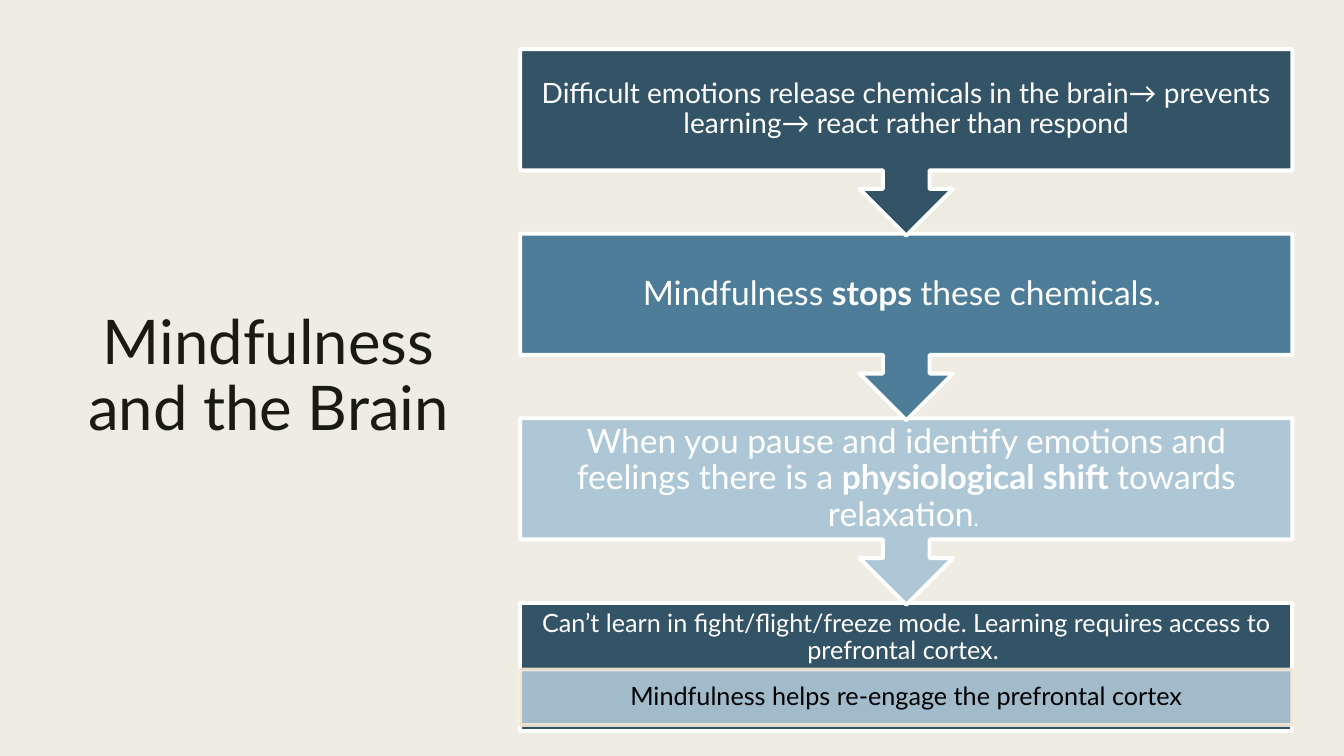
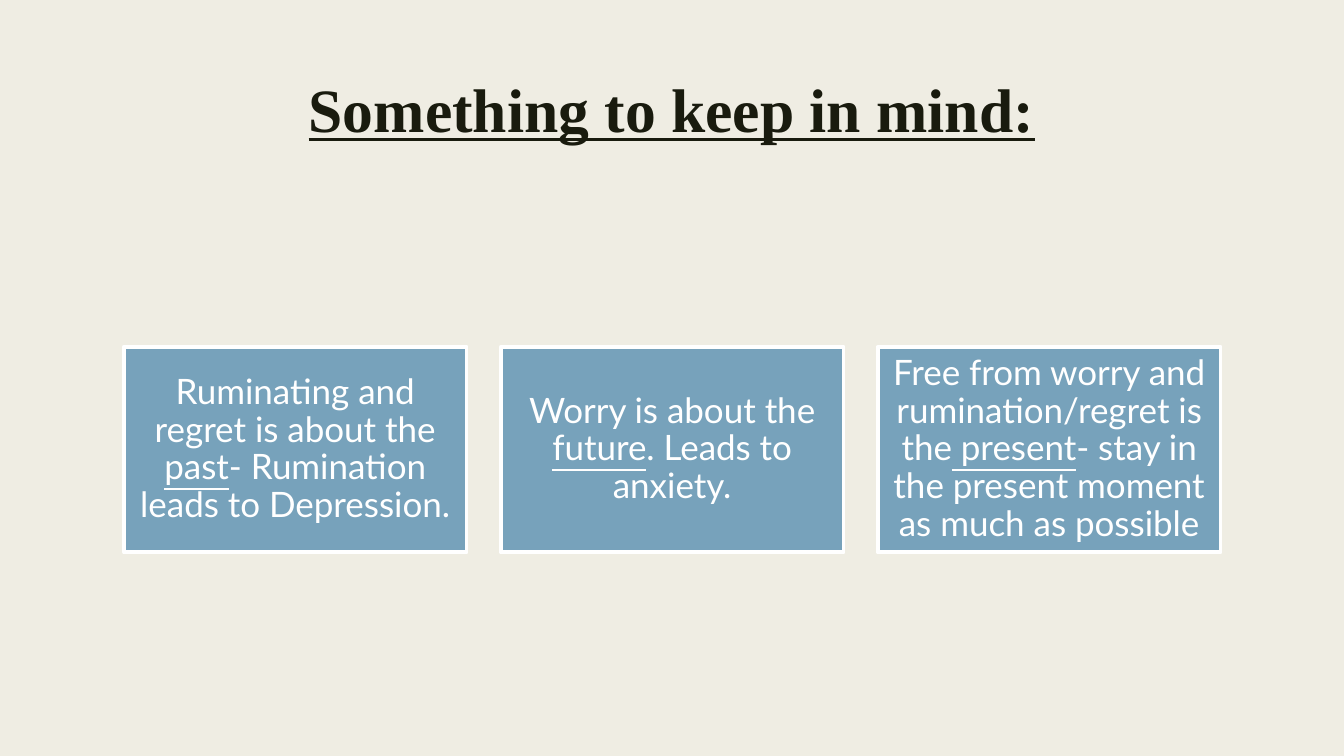
from lxml import etree
from pptx import Presentation
from pptx.dml.color import RGBColor
from pptx.enum.shapes import MSO_SHAPE as Shape
from pptx.enum.text import MSO_ANCHOR as Anchor, PP_ALIGN as Align
from pptx.oxml.ns import qn
from pptx.util import Cm, Pt

PAPER, INK, WHITE, BLACK = "EFEDE3", "191B0E", "FFFFFF", "000000"
NAVY, BLUE, PALE, STEEL, SAND = "335366", "4D7D99", "ADC7D6", "77A2BB", "F5E8D4"
BOLD, UNDERLINE = {"bold": True}, {"underline": True}


def rgb(value):
    return RGBColor.from_string(value)


def add_alpha(properties, percent):
    for color in properties.iterfind(".//" + qn("a:srgbClr")):
        etree.SubElement(color, qn("a:alpha"), val=str(percent * 1000))


class Builder:
    """Holds the deck style and the current slide."""

    font = "Lato"
    title_size = 44
    outline = 2.75

    def __init__(self):
        self.deck = Presentation()
        self.deck.slide_width, self.deck.slide_height = Cm(33.87), Cm(19.05)
        self.page = None

    def new_page(self):
        self.page = self.deck.slides.add_slide(self.deck.slide_layouts[6])
        fill = self.page.background.fill
        fill.solid()
        fill.fore_color.rgb = rgb(PAPER)

    def fill_text(self, box, spans, size, color, font=None, spacing=0.9,
                  anchor=Anchor.MIDDLE, bold=None, underline=None):
        frame = box.text_frame
        frame.word_wrap = True
        frame.vertical_anchor = anchor
        para = frame.paragraphs[0]
        para.alignment = Align.CENTER
        para.line_spacing = spacing
        para.font.name = font or self.font
        para.font.size = Pt(size)
        para.font.color.rgb = rgb(color)
        para.font.bold = bold
        para.font.underline = underline
        for text, changes in spans:
            span = para.add_run()
            span.text = text
            span.font.bold = changes.get("bold")
            span.font.underline = changes.get("underline")
            span.font.size = changes.get("size")

    def title(self, text, left, top, width, height, **style):
        box = self.page.shapes.add_textbox(Cm(left), Cm(top), Cm(width), Cm(height))
        self.fill_text(box, [(text, {})], self.title_size, INK, spacing=0.89, **style)

    def panel(self, spans, left, top, width, height, fill, size, kind=Shape.RECTANGLE,
              line=WHITE, color=WHITE, side=0.25, bottom=0.1, opacity=100):
        box = self.page.shapes.add_shape(kind, Cm(left), Cm(top), Cm(width), Cm(height))
        box.shadow.inherit = False
        box.fill.solid()
        box.fill.fore_color.rgb = rgb(fill)
        box.line.color.rgb = rgb(line)
        box.line.width = Pt(self.outline)
        if opacity < 100:
            add_alpha(box.element.spPr, opacity)
        frame = box.text_frame
        frame.margin_left = frame.margin_right = Cm(side)
        frame.margin_top, frame.margin_bottom = Cm(0.1), Cm(bottom)
        self.fill_text(box, spans, size, color)


def brain_page(builder):
    builder.new_page()
    builder.title("Mindfulness and the Brain", 1.78, 1.78, 9.98, 15.49)
    left, width, top, step = 13.11, 19.46, 1.24, 4.65
    steps = [
        ([("Difficult emotions release chemicals in the brain→ prevents learning→ "
           "react rather than respond", {})], NAVY, 20, 0.41),
        ([("Mindfulness ", {}), ("stops ", BOLD), ("these chemicals. ", {})], BLUE, 24, 0.48),
        ([("When you pause and identify emotions and feelings there is a ", {}),
          ("physiological shift ", BOLD), ("towards relaxation", {}),
          (". ", {"size": Pt(16)})], PALE, 24, 0.48),
    ]
    builder.panel([("Can’t learn in fight/flight/freeze mode. Learning requires access to "
                    "prefrontal cortex. ", {})],
                  left, top + len(steps) * step, width, 3.23, NAVY, 18, side=0.36, bottom=1.57)
    builder.panel([("Mindfulness helps re-engage the prefrontal cortex", {})],
                  left, 16.87, width, 1.4, PALE, 18, line=SAND, color=BLACK, side=0.36, opacity=90)
    for index, (spans, fill, size, side) in reversed(list(enumerate(steps))):
        builder.panel(spans, left, top + index * step, width, 4.7, fill, size,
                      kind=Shape.DOWN_ARROW_CALLOUT, side=side)


def reminder_page(builder):
    builder.new_page()
    builder.title("Something to keep in mind:", 1.78, 1.9, 30.3, 4.11,
                  font="Times New Roman", anchor=Anchor.TOP, bold=True, underline=True)
    cards = [
        ("Ruminating and regret is about the ", "past", "- Rumination leads to Depression."),
        ("Worry is about the ", "future", ". Leads to anxiety."),
        ("Free from worry and rumination/regret is the", " present",
         "- stay in the present moment as much as possible"),
    ]
    for index, (before, keyword, after) in enumerate(cards):
        builder.panel([(before, {}), (keyword, UNDERLINE), (after, {})],
                      3.12 + index * 9.5, 8.74, 8.64, 5.18, STEEL, 25)


def main():
    builder = Builder()
    brain_page(builder)
    reminder_page(builder)
    builder.deck.save("out.pptx")


if __name__ == "__main__":
    main()
